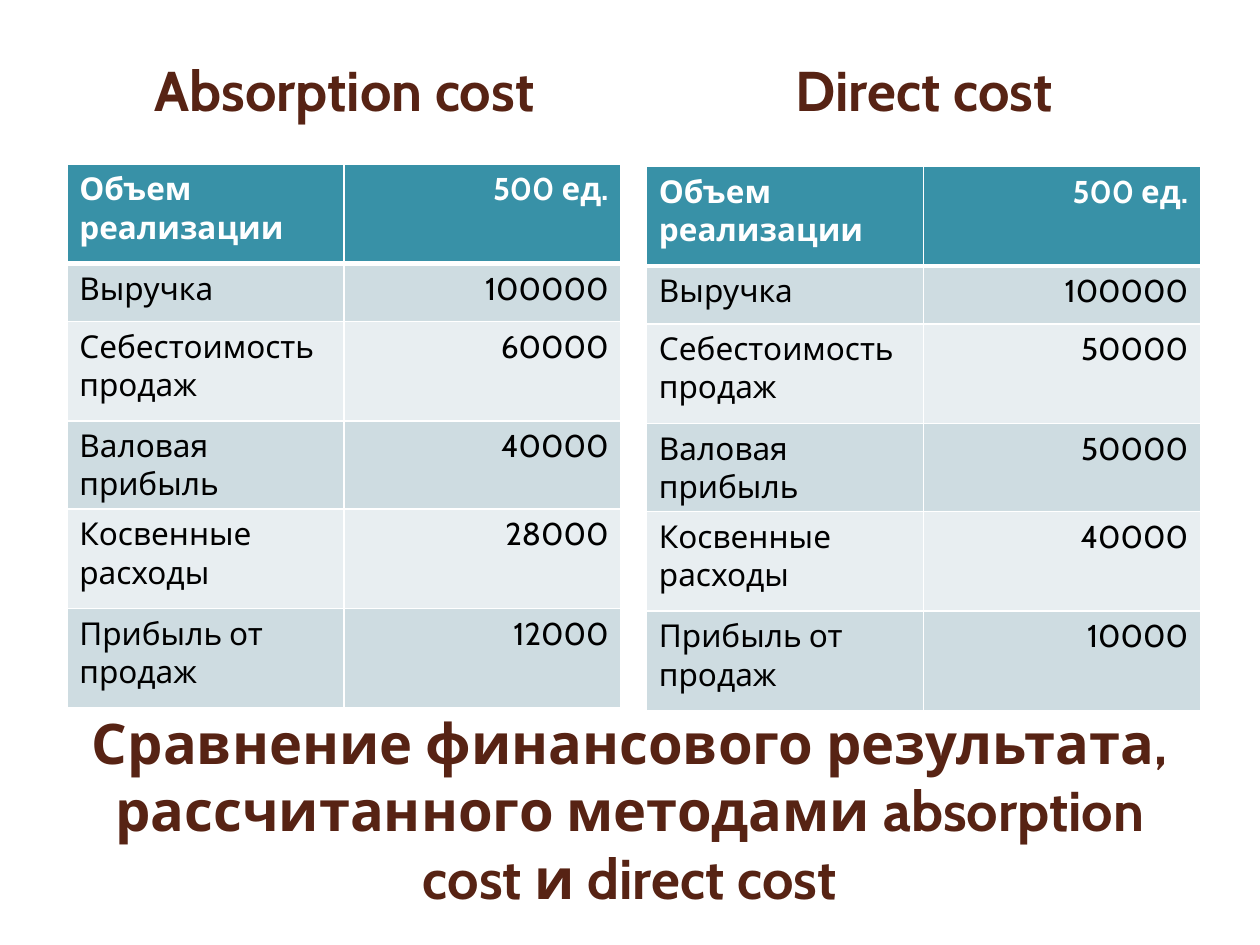
"""Build a slide comparing absorption cost and direct cost results."""
from lxml import etree
from pptx import Presentation
from pptx import util as u
from pptx.dml import color
from pptx.enum import shapes, text
from pptx.oxml import ns

FONT = "Cabin"
BROWN, WHITE, BLACK, TEAL = "572314", "FFFFFF", "000000", "3891A7"
BANDS = ("CEDCE1", "E8EEF1")
TITLE = "Сравнение финансового результата, рассчитанного методами absorption cost и direct cost"
LABELS = ("Объем реализации", "Выручка", "Себестоимость продаж",
          "Валовая прибыль", "Косвенные расходы", "Прибыль от продаж")
METHODS = (
    {"heading": "Absorption cost", "left": 0.5, "table_top": 1.3,
     "values": ("500 ед.", "100000", "60000", "40000", "28000", "12000")},
    {"heading": "Direct cost", "left": 5.1, "table_top": 1.32,
     "values": ("500 ед.", "100000", "50000", "50000", "40000", "10000")},
)
ROW_HEIGHTS = (0.79, 0.46, 0.79, 0.46, 0.79, 0.79)
COLUMN_WIDTH = 2.2


def rgb(value):
    return color.RGBColor.from_string(value)


def write(text_frame, words, size, ink, bold, align):
    text_frame.text = words
    text_frame.word_wrap = True
    paragraph = text_frame.paragraphs[0]
    paragraph.alignment = align
    font = paragraph.runs[0].font
    font.name, font.size, font.bold = FONT, u.Pt(size), bold
    font.color.rgb = rgb(ink)
    return paragraph


def add_border(cell, side, width):
    properties = cell._tc.get_or_add_tcPr()
    line = etree.SubElement(properties, ns.qn(f"a:ln{side}"), w=str(u.Pt(width)))
    fill = etree.SubElement(line, ns.qn("a:solidFill"))
    etree.SubElement(fill, ns.qn("a:srgbClr"), val=WHITE)


def add_title(slide):
    box = slide.shapes.add_textbox(u.Inches(0.5), u.Inches(5.64), u.Inches(9), u.Inches(1.57))
    box.text_frame.vertical_anchor = text.MSO_ANCHOR.MIDDLE
    write(box.text_frame, TITLE, 32, BROWN, True, text.PP_ALIGN.CENTER)


def add_heading(slide, words, left):
    shape = slide.shapes.add_shape(shapes.MSO_SHAPE.RECTANGLE, u.Inches(left),
                                   u.Inches(0.36), u.Inches(4.4), u.Inches(0.7))
    shape.shadow.inherit = False
    shape.fill.solid()
    shape.fill.fore_color.rgb = rgb(WHITE)
    shape.line.color.rgb = rgb(WHITE)
    shape.line.width = u.Pt(0.85)
    shape.text_frame.vertical_anchor = text.MSO_ANCHOR.MIDDLE
    paragraph = write(shape.text_frame, words, 32, BROWN, True, text.PP_ALIGN.CENTER)
    paragraph.space_before = u.Pt(1)
    paragraph._p.get_or_add_pPr().set("marL", str(u.Inches(0.07)))


def add_results(slide, values, left, top):
    frame = slide.shapes.add_table(len(LABELS), 2, u.Inches(left), u.Inches(top),
                                   u.Inches(2 * COLUMN_WIDTH), u.Inches(sum(ROW_HEIGHTS)))
    table = frame.table
    for column in table.columns:
        column.width = u.Inches(COLUMN_WIDTH)
    for index, (height, *words) in enumerate(zip(ROW_HEIGHTS, LABELS, values)):
        table.rows[index].height = u.Inches(height)
        header = index == 0
        background = TEAL if header else BANDS[(index - 1) % 2]
        borders = {"L": 1, "R": 1, "T": 3 if index == 1 else 1, "B": 3 if header else 1}
        for cell, word, align in zip(table.rows[index].cells, words,
                                     (text.PP_ALIGN.LEFT, text.PP_ALIGN.RIGHT)):
            for side, width in borders.items():
                add_border(cell, side, width)
            cell.fill.solid()
            cell.fill.fore_color.rgb = rgb(background)
            write(cell.text_frame, word, 18, WHITE if header else BLACK, header, align)


def main():
    presentation = Presentation()
    presentation.slide_width, presentation.slide_height = u.Inches(10), u.Inches(7.5)
    slide = presentation.slides.add_slide(presentation.slide_layouts[6])
    add_title(slide)
    for method in METHODS:
        add_heading(slide, method["heading"], method["left"])
    for method in METHODS:
        add_results(slide, method["values"], method["left"] + 0.03, method["table_top"])
    presentation.save("out.pptx")


if __name__ == "__main__":
    main()
